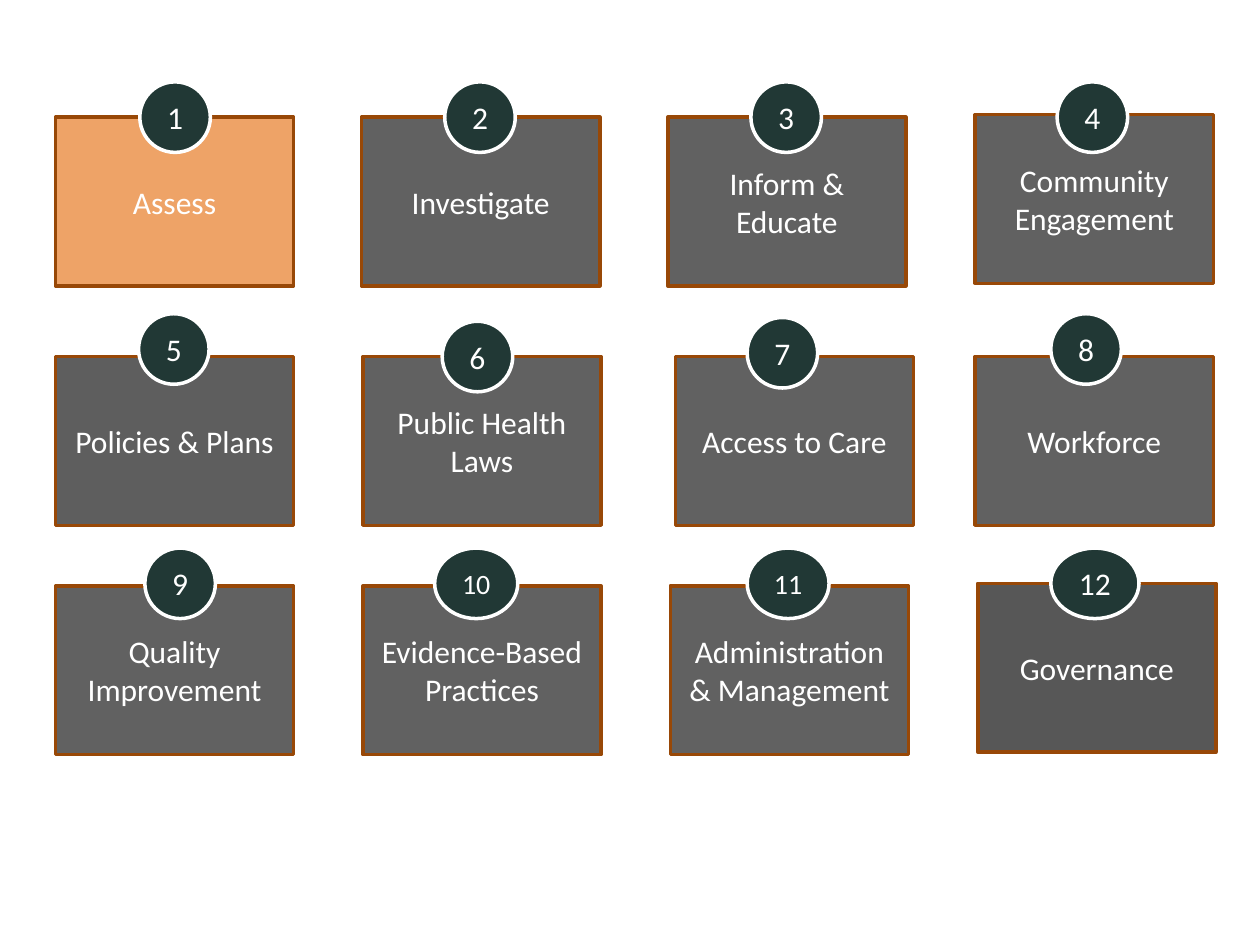
from collections import namedtuple

from lxml.etree import SubElement
from pptx import Presentation
from pptx.dml.color import RGBColor
from pptx.enum.shapes import MSO_SHAPE as Kind
from pptx.enum.text import MSO_ANCHOR as Anchor, PP_ALIGN as Align
from pptx.oxml.ns import qn
from pptx.util import Pt

PX = 9144
HEX = {"text": "FFFFFF", "edge": "984807", "focus": "E46C0A",
       "card": "000000", "badge": "213835", "ring": "FFFFFF"}
COLS, LEFT, STEP = 4, 44, 730 / 3
ROWS = (93, 283, 465)
WIDE, HIGH, ROUND = 189, 134, 56

Card = namedtuple("Card", "name nudge badge wide size fill alpha",
                  defaults=(ROUND, 18, "card", 62))
CARDS = (
    Card("Assess", (0, 0), (67, -28), fill="focus"),
    Card("Investigate", (0, 0), (66, -28)),
    Card("Inform & Educate", (-1, 0), (66, -28)),
    Card("Community Engagement", (0, -2), (65, -26)),
    Card("Policies & Plans", (0, 0), (66, -34), alpha=63),
    Card("Public Health Laws", (1, 0), (63, -28)),
    Card("Access to Care", (5, 0), (57, -31)),
    Card("Workforce", (0, 0), (60, -34)),
    Card("Quality Improvement", (0, 0), (71, -30)),
    Card("Evidence-Based Practices", (1, 0), (57, -30), 66, 16),
    Card("Administration & Management", (1, 0), (61, -30), 65, 16),
    Card("Governance", (2, -2), (58, -28), 70, alpha=66),
)


def rgb(key):
    """Return the named colour."""
    return RGBColor.from_string(HEX[key])


def label(slide, kind, box, text, size, fill, edge):
    """Add a filled, outlined shape with centred text and return it."""
    shape = slide.shapes.add_shape(kind, *(n * PX for n in box))
    shape.shadow.inherit = False
    shape.fill.solid()
    shape.fill.fore_color.rgb = rgb(fill)
    shape.line.color.rgb = rgb(edge)
    shape.line.width = Pt(2)
    frame = shape.text_frame
    frame.word_wrap = True
    frame.vertical_anchor = Anchor.MIDDLE
    para = frame.paragraphs[0]
    para.alignment = Align.CENTER
    run = para.add_run()
    run.text = text
    run.font.name = "Calibri"
    run.font.size = Pt(size)
    run.font.color.rgb = rgb("text")
    return shape


def fade(shape, alpha):
    """Set the opacity of a solid fill in percent."""
    tint = shape.fill._xPr.find(qn("a:solidFill"))[0]
    SubElement(tint, qn("a:alpha"), val=str(alpha * 1000))


def draw_card(slide, box, card, num):
    """Draw one card with its numbered badge on the top edge."""
    left, top = box[:2]
    base = label(slide, Kind.RECTANGLE, box, card.name, 18, card.fill, "edge")
    fade(base, card.alpha)
    dx, dy = card.badge
    spot = (left + dx, top + dy, card.wide, ROUND)
    label(slide, Kind.OVAL, spot, str(num), card.size, "badge", "ring")


def draw_grid(slide):
    """Lay the cards out in rows of four."""
    for i, card in enumerate(CARDS):
        row, col = divmod(i, COLS)
        dx, dy = card.nudge
        box = (LEFT + round(col * STEP) + dx, ROWS[row] + dy, WIDE, HIGH)
        draw_card(slide, box, card, i + 1)


def main():
    """Build the slide and save it."""
    deck = Presentation()
    deck.slide_width, deck.slide_height = 1000 * PX, 750 * PX
    draw_grid(deck.slides.add_slide(deck.slide_layouts[6]))
    deck.save("out.pptx")


if __name__ == "__main__":
    main()
